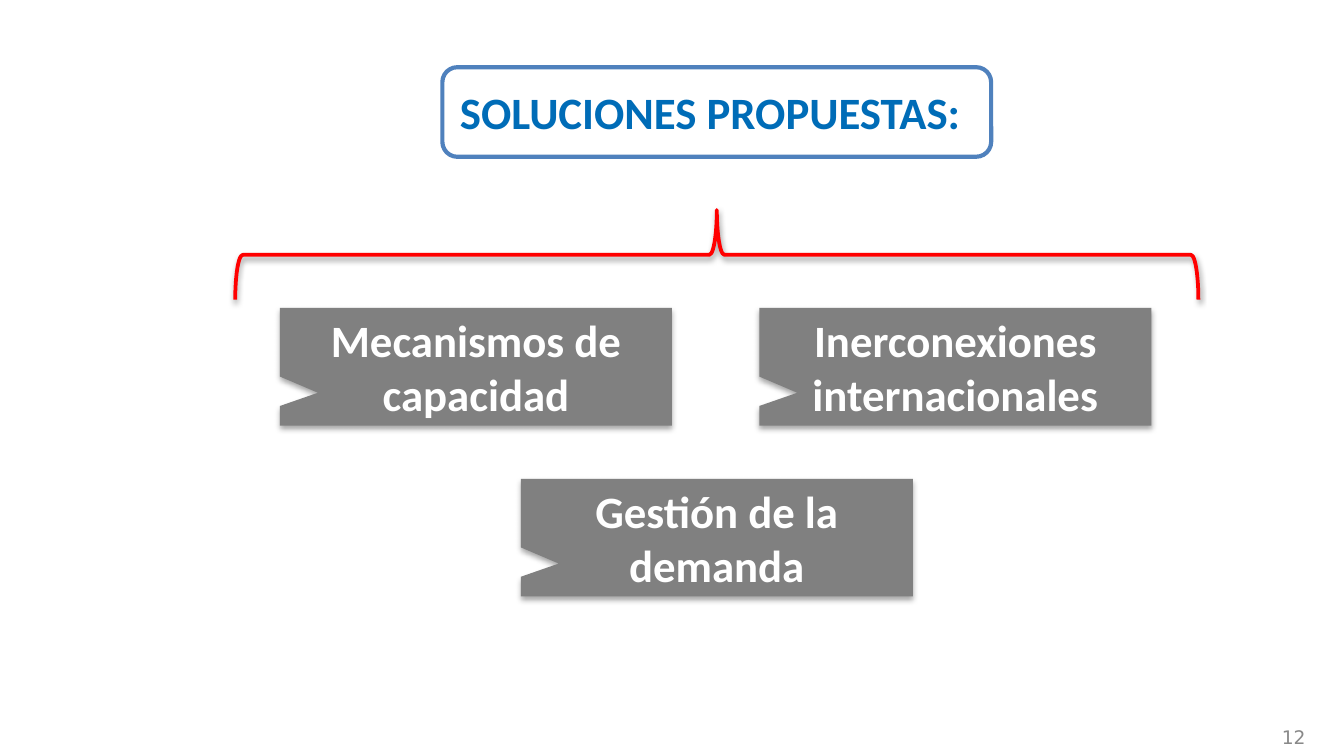
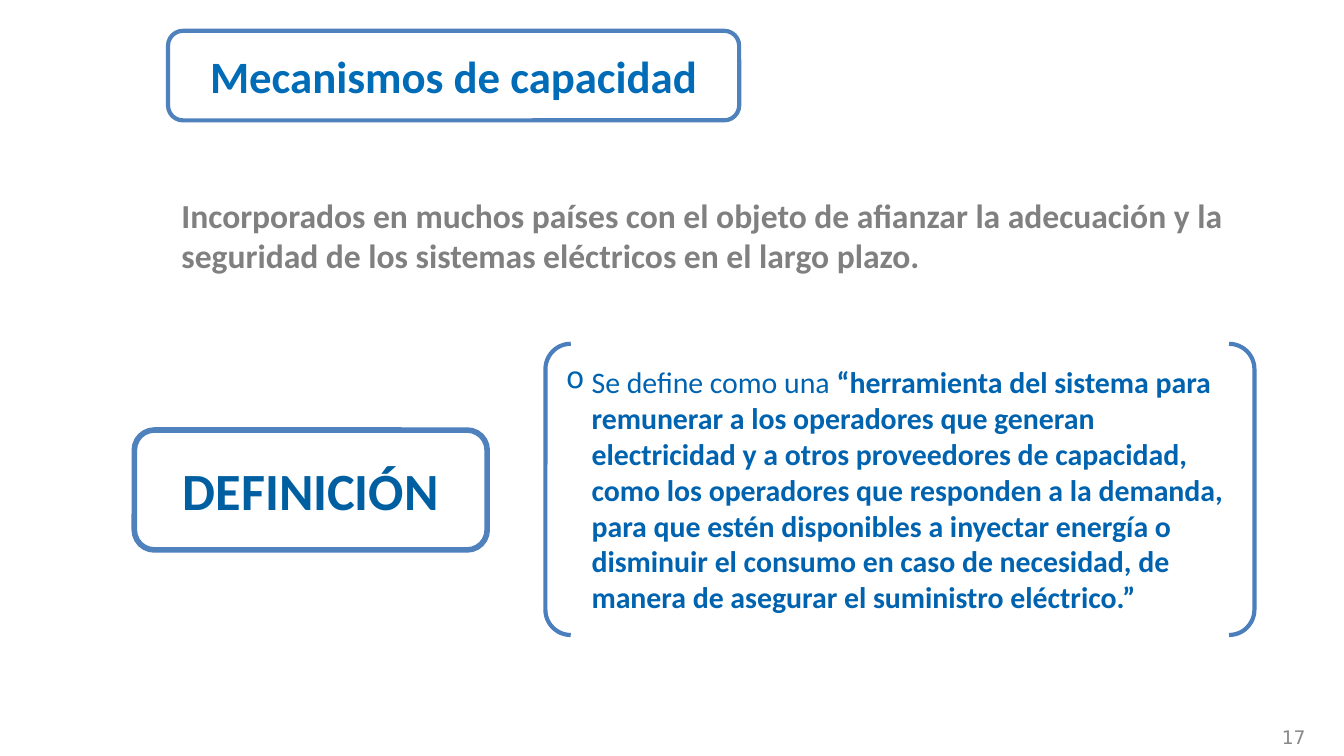
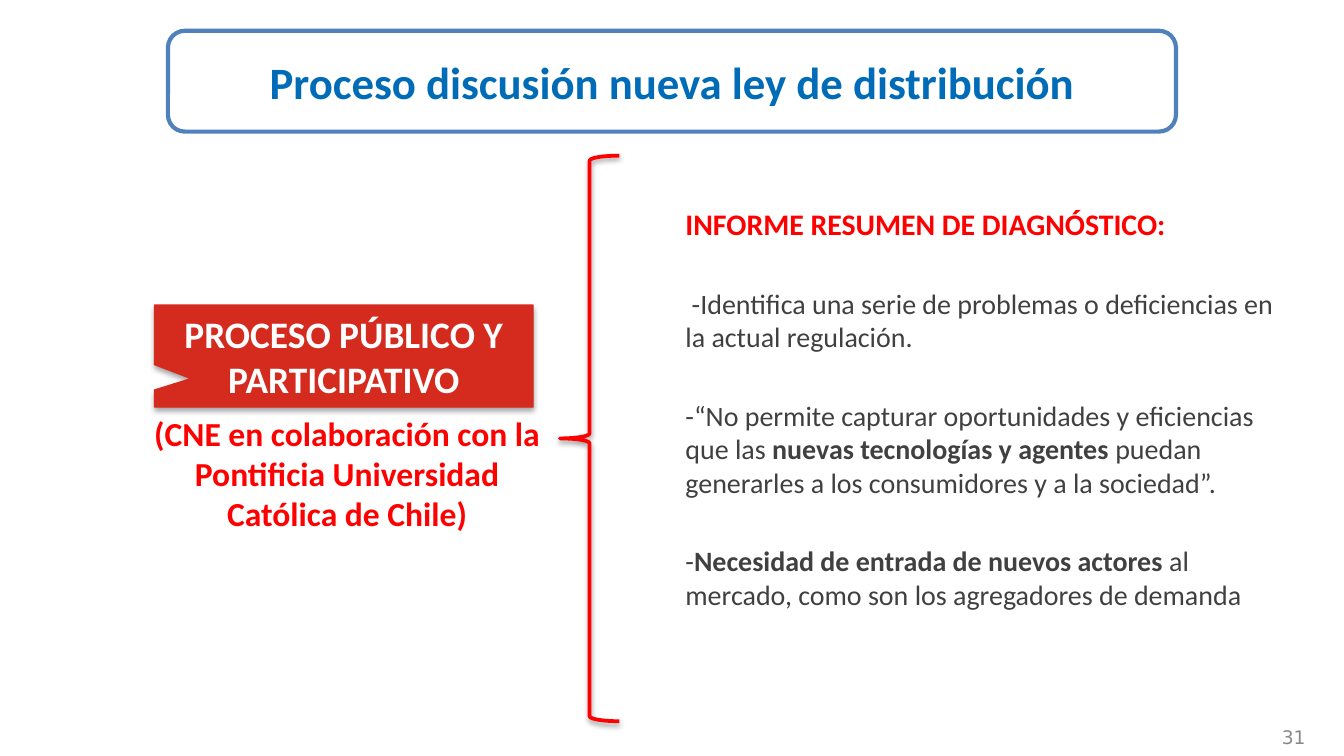
"""Builds three slides on capacity mechanisms and the new distribution law."""
from lxml import etree
from pptx import Presentation
from pptx import util as u
from pptx.dml.color import RGBColor
from pptx.enum import shapes, text
from pptx.oxml import ns

WHITE = RGBColor(0xFF, 0xFF, 0xFF)
FRAME = RGBColor(0x4F, 0x81, 0xBD)
BRACKET = RGBColor(0x4B, 0x7E, 0xBC)
HEADING = RGBColor(0x00, 0x6C, 0xB7)
DEFINITION = RGBColor(0x00, 0x5F, 0xA1)
QUOTE = RGBColor(0x00, 0x63, 0xAF)
RED = RGBColor(0xFF, 0x00, 0x00)
CRIMSON = RGBColor(0xD5, 0x2B, 0x1E)
GREY = RGBColor(0x80, 0x80, 0x80)
DARK = RGBColor(0x40, 0x40, 0x40)
PAGE = RGBColor(0x89, 0x89, 0x89)

COLUMNS, ROWS = 120, 67.5
TITLE_AND_CONTENT, BLANK = 1, 6
LEFT, CENTER, RIGHT = text.PP_ALIGN.LEFT, text.PP_ALIGN.CENTER, text.PP_ALIGN.RIGHT
TOP, MIDDLE = text.MSO_ANCHOR.TOP, text.MSO_ANCHOR.MIDDLE
PRESET = shapes.MSO_SHAPE


class Deck:
    """Holds the shared style and the current slide."""

    def __init__(self):
        self.prs = Presentation()
        self.prs.slide_width, self.prs.slide_height = u.Inches(10), u.Inches(5.625)
        self.slide = None

    def new_slide(self, number, layout=BLANK):
        """Start a slide with its page number."""
        self.slide = self.prs.slides.add_slide(self.prs.slide_layouts[layout])
        page = self.slide.shapes.add_textbox(*self.cells(89.75, 64.8, 28, 2))
        self.put_text(page, [[(number, False)]], 10, PAGE, RIGHT, font="DejaVu Sans")

    def cells(self, column, row, width, height):
        """Turn grid columns and rows into lengths."""
        across = self.prs.slide_width / COLUMNS
        down = self.prs.slide_height / ROWS
        return [u.Emu(round(n)) for n in
                (column * across, row * down, width * across, height * down)]

    def put_text(self, holder, paragraphs, size, color, align=CENTER, anchor=MIDDLE,
                 gap=0, bullet=None, font="Calibri"):
        """Fill a shape with paragraphs, each a list of (words, bold) runs."""
        frame = holder.text_frame
        frame.word_wrap = True
        frame.auto_size = text.MSO_AUTO_SIZE.NONE
        frame.vertical_anchor = anchor
        for index, runs in enumerate(paragraphs):
            paragraph = frame.add_paragraph() if index else frame.paragraphs[0]
            self.mark(paragraph, bullet)
            paragraph.alignment = align
            paragraph.space_before = u.Pt(gap if index else 0)
            for words, bold in runs:
                run = paragraph.add_run()
                run.text = words
                run.font.name, run.font.size, run.font.bold = font, u.Pt(size), bold
                run.font.color.rgb = color
        return frame

    @staticmethod
    def mark(paragraph, bullet):
        """Give a paragraph a hanging bullet, or none at all."""
        props = paragraph._p.get_or_add_pPr()
        hang = u.Inches(0.19) if bullet else 0
        props.set("marL", str(hang))
        props.set("indent", str(-hang))
        tag = etree.SubElement(props, ns.qn("a:buChar" if bullet else "a:buNone"))
        if bullet:
            tag.set("char", bullet)

    def outline(self, preset, area, fill=None, line=None, weight=2.25):
        """Draw a preset shape without a shadow."""
        shape = self.slide.shapes.add_shape(preset, *self.cells(*area))
        shape.shadow.inherit = False
        if fill is None:
            shape.fill.background()
        else:
            shape.fill.solid()
            shape.fill.fore_color.rgb = fill
        if line is None:
            shape.line.fill.background()
        else:
            shape.line.color.rgb = line
            shape.line.width = u.Pt(weight)
        return shape

    @staticmethod
    def cast_shadow(shape, opacity, distance):
        """Add a soft shadow below a shape."""
        effects = shape._element.spPr.find(ns.qn("a:effectLst"))
        shadow = etree.SubElement(effects, ns.qn("a:outerShdw"), blurRad=str(u.Pt(3.1)),
                                  dist=str(u.Pt(distance)), dir="5400000", rotWithShape="0")
        black = etree.SubElement(shadow, ns.qn("a:srgbClr"), val="000000")
        etree.SubElement(black, ns.qn("a:alpha"), val=str(opacity * 1000))

    def framed(self, words, area, size=24, color=HEADING, align=CENTER, weight=2.25):
        """Draw a rounded frame with bold words."""
        frame = self.outline(PRESET.ROUNDED_RECTANGLE, area, WHITE, FRAME, weight)
        self.put_text(frame, [[(words, True)]], size, color, align)

    def callout(self, words, area, size=24, fill=GREY, line=None):
        """Draw a notched label with a shadow."""
        label = self.outline(PRESET.RECTANGULAR_CALLOUT, area, fill, line, 0.75)
        label.adjustments[0], label.adjustments[1] = -0.403, 0.221
        self.cast_shadow(label, 35, 1.8)
        self.put_text(label, [[(words, True)]], size, WHITE)

    def brace(self, area, rotation=0):
        """Draw a red brace with a shadow."""
        brace = self.outline(PRESET.LEFT_BRACE, area, line=RED, weight=2)
        brace.rotation = rotation
        self.cast_shadow(brace, 38, 1.6)

    def bracketed(self, runs, area):
        """Draw a bulleted statement between brackets."""
        pair = self.outline(PRESET.DOUBLE_BRACKET, area, line=BRACKET)
        pair.adjustments[0] = 0.087
        self.put_text(pair, [runs], 16, QUOTE, LEFT, bullet="o")

    def placed(self, index, area):
        """Move a placeholder of the layout to its area."""
        holder = self.slide.placeholders[index]
        holder.left, holder.top, holder.width, holder.height = self.cells(*area)
        return holder

    def title(self, words, area):
        """Fill the slide's title placeholder."""
        self.put_text(self.placed(0, area), [[(words, True)]], 18, RED, anchor=TOP)

    def body(self, paragraphs, area, size, color, gap=0):
        """Fill the slide's body placeholder."""
        return self.put_text(self.placed(1, area), paragraphs, size, color, LEFT, TOP, gap)

    def drop_title(self):
        """Remove the unused title placeholder."""
        unused = self.slide.shapes.title._element
        unused.getparent().remove(unused)


def solutions(deck):
    """Show the proposed solutions."""
    deck.new_slide("12")
    deck.framed("SOLUCIONES PROPUESTAS:", (39.5, 6, 49, 8), align=LEFT)
    deck.brace((60, -20.25, 8, 86), rotation=90)
    for words, column, row in (("Mecanismos de capacidad", 25, 27.5),
                               ("Inerconexiones internacionales", 67.8, 27.5),
                               ("Gestión de la demanda", 46.5, 42.75)):
        deck.callout(words, (column, row, 35, 10.5))


def mechanisms(deck):
    """Define the capacity mechanisms."""
    deck.new_slide("17", TITLE_AND_CONTENT)
    deck.drop_title()
    deck.body([[("Incorporados en muchos países con el objeto de afianzar la adecuación y la "
                 "seguridad de los sistemas eléctricos en el largo plazo.", True)]],
              (15, 16.8, 97, 12), 18, GREY)
    deck.framed("Mecanismos de capacidad", (15, 2.75, 51, 8))
    deck.framed("DEFINICIÓN", (12, 38.4, 31.5, 10.7), 28, DEFINITION, weight=3)
    deck.bracketed([("Se define como una ", False),
                    ("“herramienta del sistema para remunerar a los operadores que generan "
                     "electricidad y a otros proveedores de capacidad, como los operadores "
                     "que responden a la demanda, para que estén disponibles a inyectar "
                     "energía o disminuir el consumo en caso de necesidad, de manera de "
                     "asegurar el suministro eléctrico.”", True)],
                   (48.7, 30.7, 63.3, 26))


def distribution_law(deck):
    """Summarise the debate on the distribution law."""
    deck.new_slide("31", TITLE_AND_CONTENT)
    report = deck.body(
        [[("INFORME RESUMEN DE DIAGNÓSTICO:", True)],
         [(" -Identifica una serie de problemas o deficiencias en la actual regulación.", False)],
         [("-“No permite capturar oportunidades y eficiencias que las ", False),
          ("nuevas tecnologías y agentes ", True),
          ("puedan generarles a los consumidores y a la sociedad”.", False)],
         [("-", False), ("Necesidad de entrada de nuevos actores ", True),
          ("al mercado, como son los agregadores de demanda", False)]],
        (60, 13.9, 56.3, 44.5), 15, DARK, gap=24)
    report.margin_top = u.Inches(0.37)
    report_heading = report.paragraphs[0].runs[0].font
    report_heading.size, report_heading.color.rgb = u.Pt(16), RED
    deck.title("(CNE en colaboración con la Pontificia Universidad Católica de Chile)",
               (12, 36.25, 38, 12))
    deck.framed("Proceso discusión nueva ley de distribución", (15, 2.75, 90, 9))
    deck.brace((50, 13.9, 5.3, 50.5))
    deck.callout("PROCESO PÚBLICO Y PARTICIPATIVO", (13.8, 27.25, 33.8, 9.1), 20,
                 CRIMSON, CRIMSON)


def main():
    """Build and save the slides."""
    deck = Deck()
    for build in (solutions, mechanisms, distribution_law):
        build(deck)
    deck.prs.save("out.pptx")


if __name__ == "__main__":
    main()
